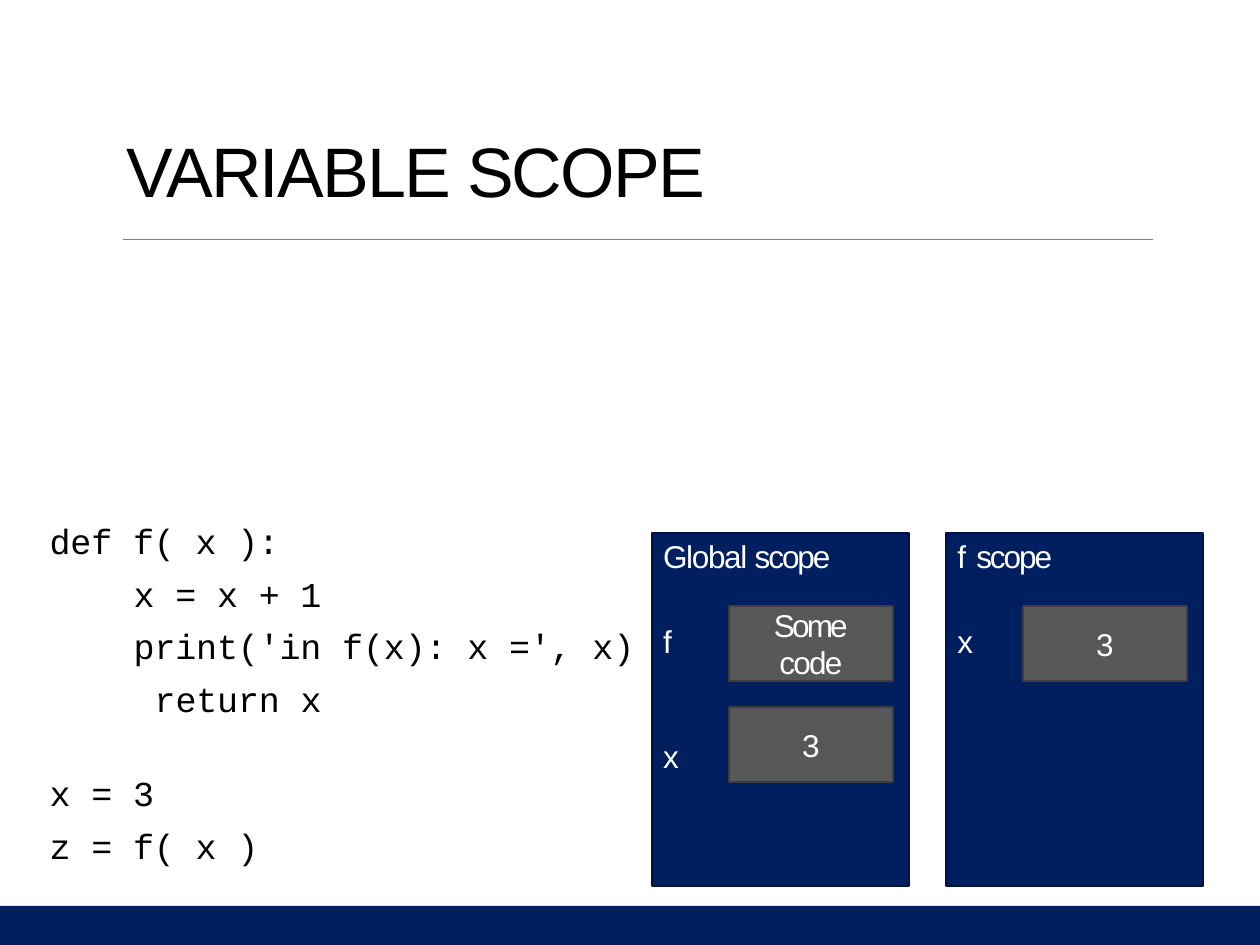
from lxml.etree import SubElement
from pptx import Presentation
from pptx.dml.color import RGBColor
from pptx.enum.shapes import MSO_CONNECTOR, MSO_SHAPE
from pptx.enum.text import MSO_ANCHOR, MSO_AUTO_SIZE, PP_ALIGN
from pptx.oxml.ns import qn
from pptx.util import Pt

COLORS = {
    "navy": "001F5F", "navy_edge": "001344", "gray": "585858",
    "gray_edge": "3E3E3E", "rule": "7E7E7E", "black": "000000", "white": "FFFFFF",
}
TITLE = "VARIABLE SCOPE"
# Each block: top, width, height, then lines as (indent in characters, text)
CODE_BLOCKS = [
    (291.6, 338.4, 117.4, [
        (0, "def f( x ):"),
        (4, "x = x + 1"),
        (4, "print('in f(x): x =', x)"),
        (5, "return x"),
    ]),
    (435.6, 121.7, 60.5, [(0, "x = 3"), (0, "z = f( x )")]),
]
# Each scope: name, letter spacing of the name, then (variable, spacing, value lines)
SCOPES = [
    ("Global ", -0.8, [("f", 0.4, ["Some", "code"]), ("x", -0.8, ["3"])]),
    ("f ", 0.4, [("x", 0.4, ["3"])]),
]
VALUE_SPACING = {"Some": -1.6, "code": -1, "3": -0.9}

CODE_LEFT, CHARACTER_WIDTH = 27.4, 12
PANEL_LEFT, PANEL_TOP, PANEL_WIDTH, PANEL_HEIGHT, PANEL_STEP = 372.4, 304.6, 146.9, 201.6, 168.1
VALUE_OFFSET_X, VALUE_OFFSET_Y, VALUE_WIDTH, VALUE_HEIGHT, VALUE_STEP = 44, 41.5, 93.8, 43.2, 57.8
VARIABLE_GAPS = [27.3, 43.9]


def rgb(name):
    return RGBColor.from_string(COLORS[name])


def format_run(run, font_name, size, color, spacing):
    run.font.name = font_name
    run.font.size = Pt(size)
    run.font.color.rgb = rgb(color)
    run.font._element.set("spc", str(round(spacing * 100)))


def add_run(paragraph, text, spacing):
    run = paragraph.add_run()
    run.text = text
    format_run(run, "Arial", 18, "white", spacing)


def indent(paragraph, points):
    paragraph._p.get_or_add_pPr().set("marL", str(Pt(points)))


def prepare_frame(frame, top=0, anchor=MSO_ANCHOR.TOP):
    frame.margin_left = frame.margin_right = frame.margin_bottom = 0
    frame.margin_top = Pt(top)
    frame.vertical_anchor = anchor
    frame.word_wrap = True
    frame.auto_size = MSO_AUTO_SIZE.NONE


def add_rectangle(slide, left, top, width, height, fill, edge=None):
    shape = slide.shapes.add_shape(
        MSO_SHAPE.RECTANGLE, Pt(left), Pt(top), Pt(width), Pt(height))
    shape.shadow.inherit = False
    shape.fill.solid()
    shape.fill.fore_color.rgb = rgb(fill)
    if edge:
        shape.line.color.rgb = rgb(edge)
        shape.line.width = Pt(1.25)
    else:
        shape.line.fill.background()
    return shape


def add_title(slide):
    title = slide.shapes.title
    title.left, title.top, title.width, title.height = Pt(71.3), Pt(72), Pt(391), Pt(49.7)
    frame = title.text_frame
    prepare_frame(frame, 0.9)
    frame.text = TITLE
    paragraph = frame.paragraphs[0]
    paragraph.alignment = PP_ALIGN.LEFT
    paragraph.space_before = Pt(1)
    indent(paragraph, 1)
    format_run(paragraph.runs[0], "Arial", 40, "black", -1)


def add_rule(slide):
    rule = slide.shapes.add_connector(
        MSO_CONNECTOR.STRAIGHT, Pt(70.3), Pt(136.8), Pt(658.9), Pt(136.8))
    rule.line.color.rgb = rgb("rule")
    rule.line.width = Pt(0.48)
    SubElement(rule._element.spPr, qn("a:effectLst"))


def add_code(slide, top, width, height, lines):
    box = slide.shapes.add_textbox(Pt(CODE_LEFT), Pt(top), Pt(width), Pt(height))
    frame = box.text_frame
    prepare_frame(frame, 5.5)
    frame.text = "\n".join(text for _, text in lines)
    for paragraph, (level, _) in zip(frame.paragraphs, lines):
        paragraph.space_before = Pt(6)
        indent(paragraph, 1 + level * CHARACTER_WIDTH)
        format_run(paragraph.runs[0], "Courier New", 20, "black", -0.1)


def add_value(slide, left, top, lines):
    box = add_rectangle(slide, left, top, VALUE_WIDTH, VALUE_HEIGHT, "gray", "gray_edge")
    frame = box.text_frame
    prepare_frame(frame, anchor=MSO_ANCHOR.MIDDLE)
    frame.text = "\n".join(lines)
    for paragraph in frame.paragraphs:
        paragraph.alignment = PP_ALIGN.CENTER
        run = paragraph.runs[0]
        format_run(run, "Arial", 18, "white", VALUE_SPACING[run.text])


def add_scope(slide, left, name, name_spacing, variables):
    """Add a panel with its heading and variable names, then the value boxes."""
    panel = add_rectangle(
        slide, left, PANEL_TOP, PANEL_WIDTH, PANEL_HEIGHT, "navy", "navy_edge")
    frame = panel.text_frame
    prepare_frame(frame, 2.2)
    heading = frame.paragraphs[0]
    heading.space_before = Pt(1.8)
    add_run(heading, name, name_spacing)
    add_run(heading, "scope", -1.2)
    for row, (variable, spacing, value) in enumerate(variables):
        paragraph = frame.add_paragraph()
        paragraph.space_before = Pt(VARIABLE_GAPS[row])
        add_run(paragraph, variable, spacing)
        add_value(slide, left + VALUE_OFFSET_X,
                  PANEL_TOP + VALUE_OFFSET_Y + row * VALUE_STEP, value)
    for paragraph in frame.paragraphs:
        paragraph.alignment = PP_ALIGN.LEFT
        indent(paragraph, 6.6)


def main():
    presentation = Presentation()
    presentation.slide_width, presentation.slide_height = Pt(720), Pt(540)
    slide = presentation.slides.add_slide(presentation.slide_layouts[5])
    add_rectangle(slide, 0, 517.7, 720, 22.3, "navy")
    add_rule(slide)
    for block in CODE_BLOCKS:
        add_code(slide, *block)
    add_title(slide)
    for column, scope in enumerate(SCOPES):
        add_scope(slide, PANEL_LEFT + column * PANEL_STEP, *scope)
    presentation.save("out.pptx")


if __name__ == "__main__":
    main()
